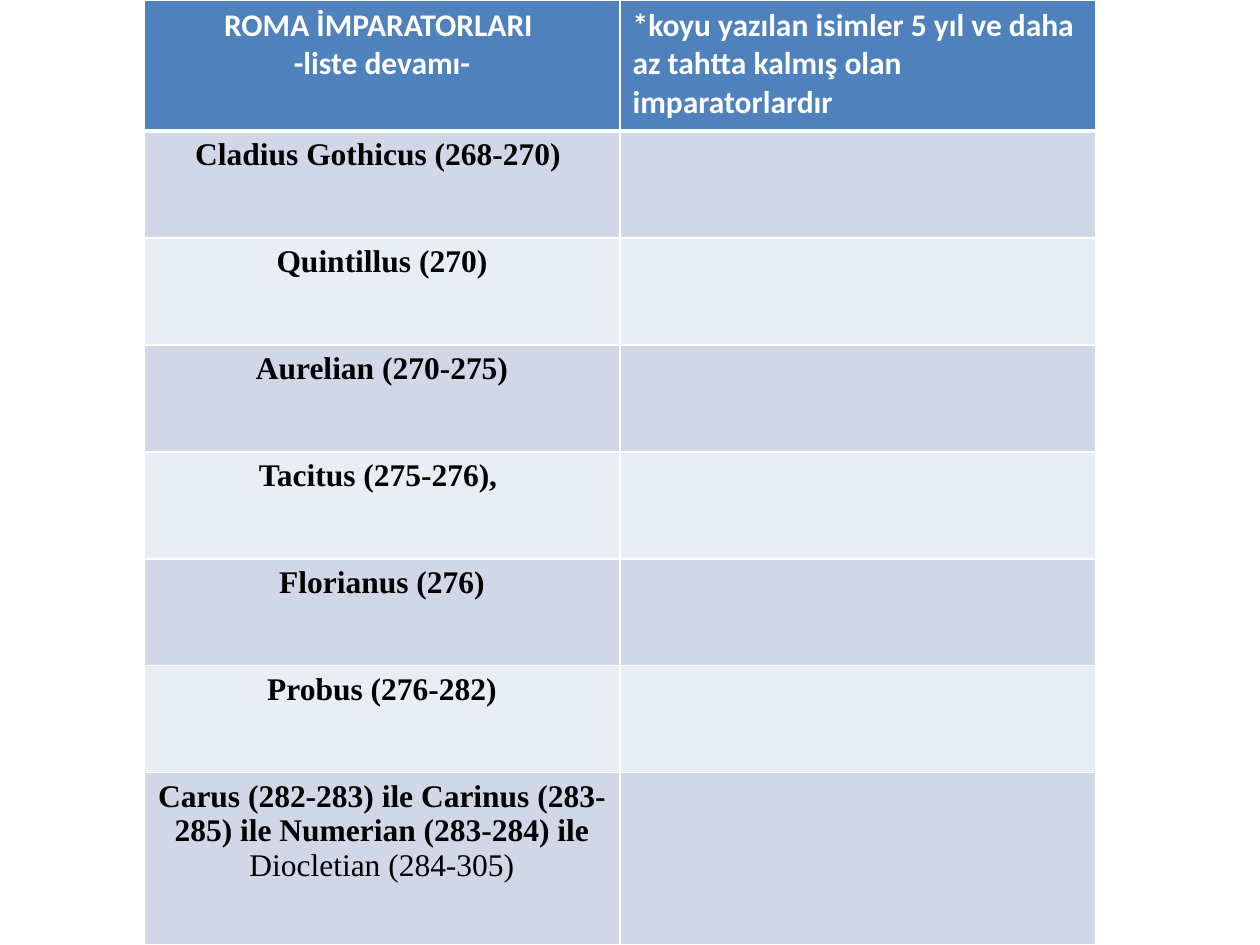
import pptx
import pptx.dml.color
import pptx.enum.text
import pptx.oxml
import pptx.oxml.ns
import pptx.util

HEADINGS = [
    ["ROMA İMPARATORLARI ", "-liste devamı-"],
    ["*koyu yazılan isimler 5 yıl ve daha az tahtta kalmış olan imparatorlardır"],
]
EMPERORS = [
    [("Cladius Gothicus (268-270) ", True)],
    [("Quintillus (270)", True)],
    [("Aurelian (270-275)", True)],
    [("Tacitus (275-276), ", True)],
    [("Florianus (276)", True)],
    [("Probus (276-282)", True)],
    [
        ("Carus (282-283) ile Carinus (283-285) ile Numerian (283-284) ile ", True),
        ("Diocletian (284-305)", False),
    ],
]
WHITE, BLACK, HEADER = "FFFFFF", "000000", "4F81BD"
BANDS = ["D0D8E8", "E9EDF4"]
LEFT, COLUMN_WIDTH = 144, 476
ROW_HEIGHTS = [131] + [107] * 6 + [172]
CENTER = pptx.enum.text.PP_ALIGN.CENTER


def px(length):
    return pptx.util.Emu(round(length * 914400 / 126))


def color(value):
    return pptx.dml.color.RGBColor.from_string(value)


def style_cell(cell, fill, bottom, top):
    cell.fill.solid()
    cell.fill.fore_color.rgb = color(fill)
    borders = [("lnL", 1), ("lnR", 1), ("lnT", top), ("lnB", bottom)]
    for position, (side, points) in enumerate(borders):
        border = pptx.oxml.parse_xml(
            f'<a:{side} {pptx.oxml.ns.nsdecls("a")} w="{pptx.util.Pt(points)}">'
            f'<a:solidFill><a:srgbClr val="{WHITE}"/></a:solidFill></a:{side}>'
        )
        cell._tc.get_or_add_tcPr().insert(position, border)


def style_paragraph(paragraph, typeface, text_color):
    paragraph.font.name = typeface
    paragraph.font.size = pptx.util.Pt(18)
    paragraph.font.color.rgb = color(text_color)


deck = pptx.Presentation()
deck.slide_width, deck.slide_height = px(1260), px(945)
slide = deck.slides.add_slide(deck.slide_layouts[6])
table = slide.shapes.add_table(
    len(ROW_HEIGHTS), 2, px(LEFT), px(0), px(2 * COLUMN_WIDTH), px(sum(ROW_HEIGHTS))
).table
for column in table.columns:
    column.width = px(COLUMN_WIDTH)
for row, height in zip(table.rows, ROW_HEIGHTS):
    row.height = px(height)

for column, lines in enumerate(HEADINGS):
    heading = table.cell(0, column)
    style_cell(heading, HEADER, bottom=3, top=1)
    heading.text = "\n".join(lines)
    for paragraph in heading.text_frame.paragraphs:
        style_paragraph(paragraph, "Calibri", WHITE)
        paragraph.font.bold = True
        if column == 0:
            paragraph.alignment = CENTER

for number, reigns in enumerate(EMPERORS, start=1):
    for column in range(2):
        style_cell(
            table.cell(number, column),
            BANDS[(number - 1) % 2],
            bottom=1,
            top=3 if number == 1 else 1,
        )
    paragraph = table.cell(number, 0).text_frame.paragraphs[0]
    paragraph.alignment = CENTER
    style_paragraph(paragraph, "Times New Roman", BLACK)
    for text, short_reign in reigns:
        run = paragraph.add_run()
        run.text = text
        run.font.bold = short_reign

deck.save("out.pptx")
